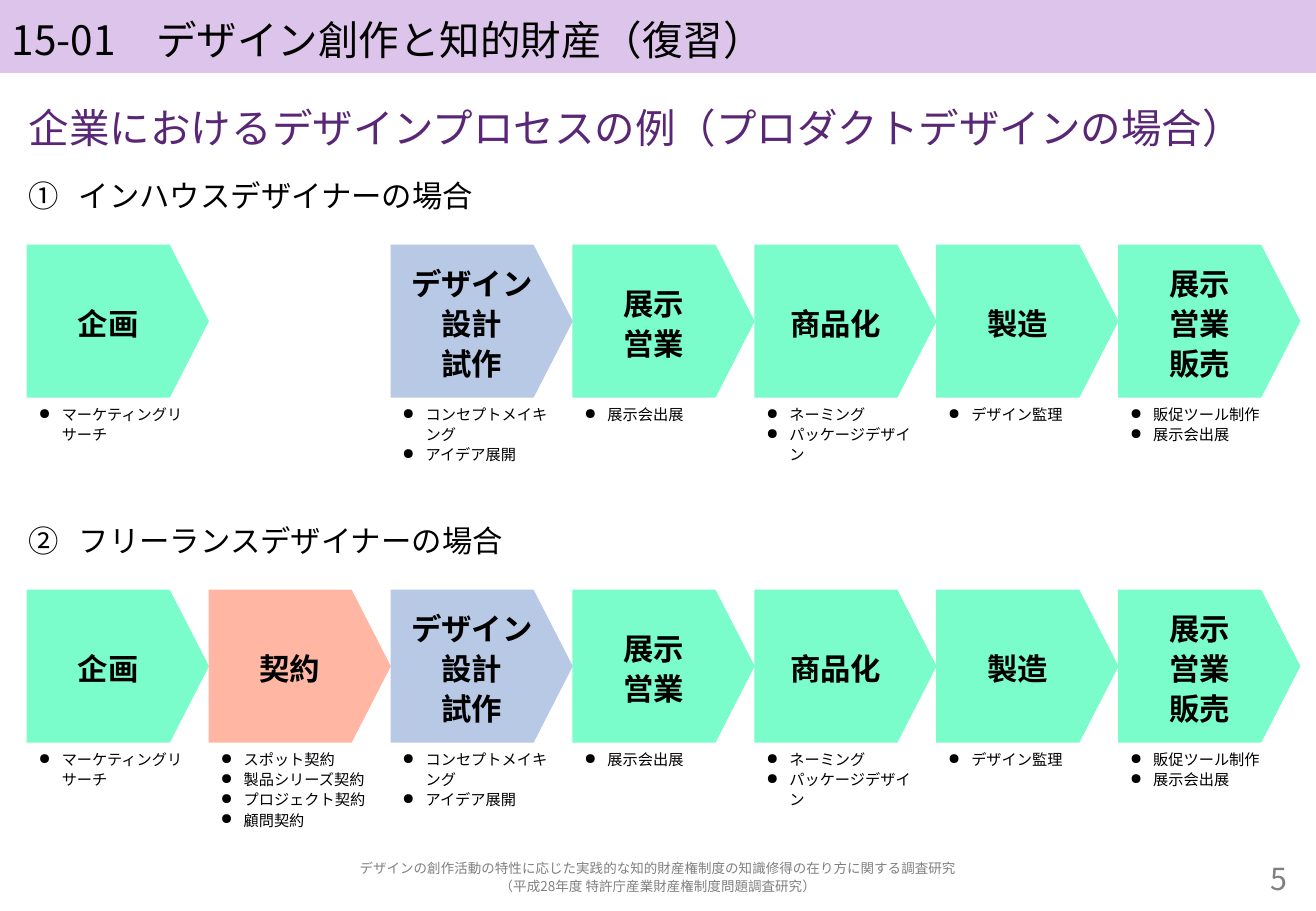
from lxml.etree import SubElement
from pptx import Presentation
from pptx.dml.color import RGBColor
from pptx.enum.shapes import MSO_SHAPE as SHAPE
from pptx.enum.text import MSO_ANCHOR as ANCHOR, PP_ALIGN as ALIGN
from pptx.oxml.ns import qn
from pptx.util import Inches, Pt

FONT = "Noto Sans CJK JP"
COLORS = {
    "text": "000000", "heading": "592775", "muted": "808080", "banner": "DDC4EB",
    "green": "7BFCCB", "blue": "B7C9E5", "salmon": "FFB7A3",
}
STAGES = [
    (["企画"], "green", ["マーケティングリサーチ"]),
    (["契約"], "salmon", ["スポット契約", "製品シリーズ契約", "プロジェクト契約", "顧問契約"]),
    (["デザイン", "設計", "試作"], "blue", ["コンセプトメイキング", "アイデア展開"]),
    (["展示", "営業"], "green", ["展示会出展"]),
    (["商品化"], "green", ["ネーミング", "パッケージデザイン"]),
    (["製造"], "green", ["デザイン監理"]),
    (["展示", "営業", "販売"], "green", ["販促ツール制作", "展示会出展"]),
]
CONTRACT = 1
LEFT, STEP = 0.22, 1.497
ARROW_W, ARROW_H, NOTES_H = 1.5, 1.26, 0.79
MARGIN, CONTENT_W = 0.14, 10.55


def rgb(name):
    return RGBColor.from_string(COLORS[name])


def write(shape, lines, size, color="text", bold=False, align=ALIGN.LEFT,
          anchor=ANCHOR.TOP, before=0):
    tf = shape.text_frame
    tf.word_wrap = True
    tf.vertical_anchor = anchor
    tf.text = "\n".join(lines)
    for p in tf.paragraphs:
        p.alignment = align
        p.line_spacing = 1.1
        p.space_before = Pt(before)
        p.font.name = FONT
        p.font.size = Pt(size)
        p.font.bold = bold
        p.font.color.rgb = rgb(color)
        for r in p.runs:
            SubElement(r._r.get_or_add_rPr(), qn("a:ea"), typeface=FONT)


def add_text(s, x, y, w, h, lines, size, **style):
    box = s.shapes.add_textbox(Inches(x), Inches(y), Inches(w), Inches(h))
    write(box, lines, size, **style)
    return box


def add_filled(s, kind, x, y, w, h, fill, lines, size, **style):
    sp = s.shapes.add_shape(kind, Inches(x), Inches(y), Inches(w), Inches(h))
    sp.shadow.inherit = False
    sp.fill.solid()
    sp.fill.fore_color.rgb = rgb(fill)
    sp.line.fill.background()
    write(sp, lines, size, anchor=ANCHOR.MIDDLE, **style)
    return sp


def add_bullets(box, indent, tag, **attrs):
    for p in box.text_frame.paragraphs:
        pPr = p._p.get_or_add_pPr()
        pPr.set("marL", str(Inches(indent)))
        pPr.set("indent", str(-Inches(indent)))
        bullet = pPr.makeelement(qn(tag), attrs)
        pPr.insert_element_before(bullet, "a:tabLst", "a:defRPr", "a:extLst")


def add_case(s, number, title, y, skipped=()):
    heading = add_text(s, MARGIN, y, CONTENT_W, 0.47, [title], 18, before=3.6)
    add_bullets(heading, 0.41, "a:buAutoNum", type="circleNumDbPlain", startAt=str(number))
    arrow_y = y + 0.635
    for i, (labels, fill, notes) in enumerate(STAGES):
        if i in skipped:
            continue
        x = LEFT + i * STEP
        arrow = add_filled(s, SHAPE.PENTAGON, x, arrow_y, ARROW_W, ARROW_H, fill,
                           labels, 18, bold=True, align=ALIGN.CENTER)
        arrow.adjustments[0] = 0.256
        box = add_text(s, x, arrow_y + ARROW_H, ARROW_W, NOTES_H, notes, 9)
        add_bullets(box, 0.19, "a:buChar", char="●")


def main():
    prs = Presentation()
    prs.slide_width, prs.slide_height = Inches(10.83), Inches(7.5)
    s = prs.slides.add_slide(prs.slide_layouts[6])
    add_filled(s, SHAPE.RECTANGLE, 0, 0, 10.83, 0.6, "banner",
               ["15-01　デザイン創作と知的財産（復習）"], 24)
    add_text(s, MARGIN, 0.76, CONTENT_W, 0.47,
             ["企業におけるデザインプロセスの例（プロダクトデザインの場合）"], 24,
             color="heading", before=4.8)
    add_case(s, 1, "インハウスデザイナーの場合", 1.38, skipped=[CONTRACT])
    add_case(s, 2, "フリーランスデザイナーの場合", 4.22)
    add_text(s, MARGIN, 7.06, CONTENT_W, 0.31,
             ["デザインの創作活動の特性に応じた実践的な知的財産権制度の知識修得の在り方に関する調査研究",
              "（平成28年度 特許庁産業財産権制度問題調査研究）"], 8,
             color="muted", align=ALIGN.CENTER, anchor=ANCHOR.MIDDLE)
    add_text(s, 9.35, 7.06, 1.34, 0.31, ["5"], 18, color="muted",
             align=ALIGN.RIGHT, anchor=ANCHOR.MIDDLE)
    prs.save("out.pptx")


if __name__ == "__main__":
    main()
